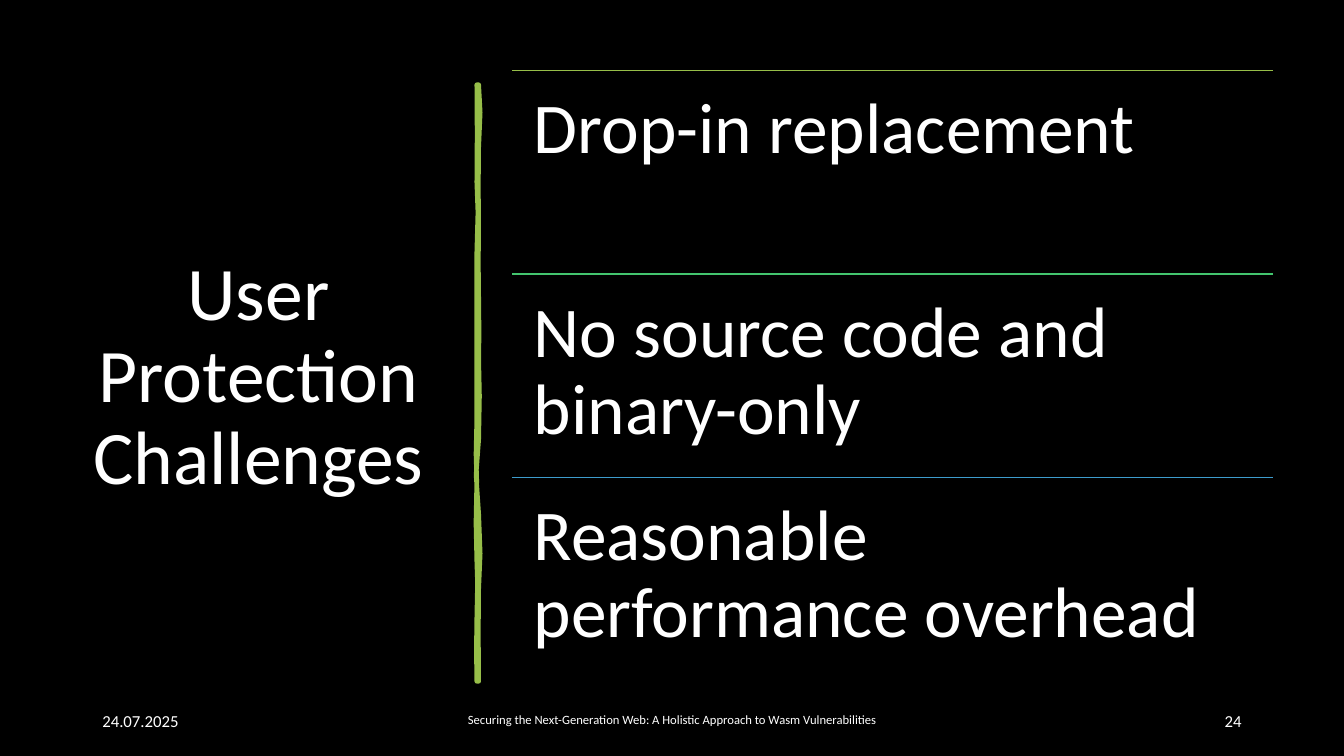
from lxml.etree import SubElement
from pptx import Presentation
from pptx.dml.color import RGBColor
from pptx.enum.shapes import MSO_CONNECTOR
from pptx.enum.text import MSO_ANCHOR, PP_ALIGN
from pptx.oxml.ns import qn
from pptx.util import Pt

BLACK = RGBColor(0x00, 0x00, 0x00)
WHITE = RGBColor(0xFF, 0xFF, 0xFF)
LIME = RGBColor(0x97, 0xBE, 0x49)
GREEN = RGBColor(0x43, 0xC5, 0x6E)
BLUE = RGBColor(0x3D, 0x9C, 0xCC)
FONT = "Calibri"

TITLE = "User Protection Challenges"
CHALLENGES = [
    ("Drop-in replacement", LIME),
    ("No source code and binary-only", GREEN),
    ("Reasonable performance overhead", BLUE),
]
# text, left, width, size, alignment, line spacing
FOOTERS = [
    ("24.07.2025", 66, 216, 12, PP_ALIGN.LEFT, 1.0),
    ("Securing the Next-Generation Web: A Holistic Approach to Wasm Vulnerabilities",
     318, 324, 9, PP_ALIGN.CENTER, 0.9),
    ("24", 678, 216, 12, PP_ALIGN.RIGHT, 1.0),
]
FOOTER_TOP, FOOTER_HEIGHT = 500.5, 28.75
ROW_LEFT, ROW_TOP, ROW_WIDTH, ROW_HEIGHT = 366, 50.55, 543.4, 145.3
ROW_INSET = 15.3

# Hand-drawn bar: a start point, then cubic curves (control, control, end)
BAR_START = (342, 60.5)
BAR_CURVES = [
    ((343.4, 73.4), (343.4, 85.7), (342, 105.1)),
    ((340.6, 124.6), (342.7, 140.4), (342, 162.7)),
    ((341.3, 185), (342, 188.6), (342, 211.7)),
    ((341.3, 234), (343.4, 246.2), (342, 256.3)),
    ((340.6, 266.4), (344.9, 298.1), (342, 313.9)),
    ((339.1, 329), (339.8, 348.5), (342, 367.2)),
    ((343.4, 385.9), (343.4, 406.1), (342, 420.5)),
    ((340.6, 434.2), (342.7, 468), (342, 486.7)),
    ((341.3, 486.7), (340.6, 486.7), (340.6, 486.7)),
    ((341.3, 465.1), (339.1, 463.7), (340.6, 441.4)),
    ((341.3, 419.8), (341.3, 410.4), (340.6, 401)),
    ((339.8, 391.7), (339.8, 356.4), (340.6, 343.4)),
    ((340.6, 330.5), (339.1, 320.4), (340.6, 298.8)),
    ((341.3, 277.9), (339.8, 268.6), (340.6, 241.2)),
    ((341.3, 214.6), (339.8, 202.3), (340.6, 180)),
    ((341.3, 157), (342, 144), (340.6, 130.3)),
    ((338.4, 117.4), (343.4, 74.9), (340.6, 60.5)),
]
CURVE_STEPS = 2


def write(sp, text, size, align=PP_ALIGN.LEFT, spacing=0.9, anchor=MSO_ANCHOR.MIDDLE):
    tf = sp.text_frame
    tf.word_wrap = True
    tf.vertical_anchor = anchor
    p = tf.paragraphs[0]
    p.alignment = align
    p.line_spacing = spacing
    r = p.add_run()
    r.text = text
    r.font.size = Pt(size)
    r.font.name = FONT
    r.font.color.rgb = WHITE


def add_text(s, text, left, top, width, height, *style):
    sp = s.shapes.add_textbox(Pt(left), Pt(top), Pt(width), Pt(height))
    write(sp, text, *style)


def add_outline(s, points):
    """Closed freeform through points given in points."""
    first, *rest = [(Pt(x), Pt(y)) for x, y in points]
    builder = s.shapes.build_freeform(*first)
    builder.add_line_segments(rest, close=True)
    sp = builder.convert_to_shape()
    sp.shadow.inherit = False
    return sp


def bezier(start, c1, c2, end):
    """Points along a cubic curve, without its start."""
    points = []
    for i in range(1, CURVE_STEPS + 1):
        t = i / CURVE_STEPS
        u = 1 - t
        points.append(tuple(
            u**3 * a + 3 * u * u * t * b + 3 * u * t * t * c + t**3 * d
            for a, b, c, d in zip(start, c1, c2, end)))
    return points


def add_bar(s):
    points = [BAR_START]
    for c1, c2, end in BAR_CURVES:
        points += bezier(points[-1], c1, c2, end)
    sp = add_outline(s, points)
    sp.fill.solid()
    sp.fill.fore_color.rgb = LIME
    sp.line.color.rgb = LIME
    sp.line.width = Pt(3.25)
    SubElement(sp.line._get_or_add_ln(), qn("a:round"))


def add_row(s, text, top, color):
    right, bottom = ROW_LEFT + ROW_WIDTH, top + ROW_HEIGHT
    rule = s.shapes.add_connector(MSO_CONNECTOR.STRAIGHT, Pt(ROW_LEFT), Pt(top),
                                  Pt(right), Pt(top))
    rule.line.color.rgb = color
    rule.line.width = Pt(1)
    SubElement(rule._element.spPr, qn("a:effectLst"))

    sp = add_outline(s, [(ROW_LEFT, top), (right, top), (right, bottom), (ROW_LEFT, bottom)])
    sp.fill.background()
    sp.line.fill.background()
    tf = sp.text_frame
    tf.margin_left = tf.margin_right = Pt(ROW_INSET)
    tf.margin_top = tf.margin_bottom = Pt(ROW_INSET)
    write(sp, text, 51, anchor=MSO_ANCHOR.TOP)


def main():
    prs = Presentation()
    prs.slide_width, prs.slide_height = Pt(960), Pt(540)
    s = prs.slides.add_slide(prs.slide_layouts[6])
    s.background.fill.solid()
    s.background.fill.fore_color.rgb = BLACK

    add_text(s, TITLE, 50, 50, 269.3, 440, 54, PP_ALIGN.CENTER)
    add_bar(s)
    for text, left, width, *style in FOOTERS:
        add_text(s, text, left, FOOTER_TOP, width, FOOTER_HEIGHT, *style)
    for i, (text, color) in enumerate(CHALLENGES):
        add_row(s, text, ROW_TOP + i * ROW_HEIGHT, color)
    prs.save("out.pptx")


if __name__ == "__main__":
    main()
